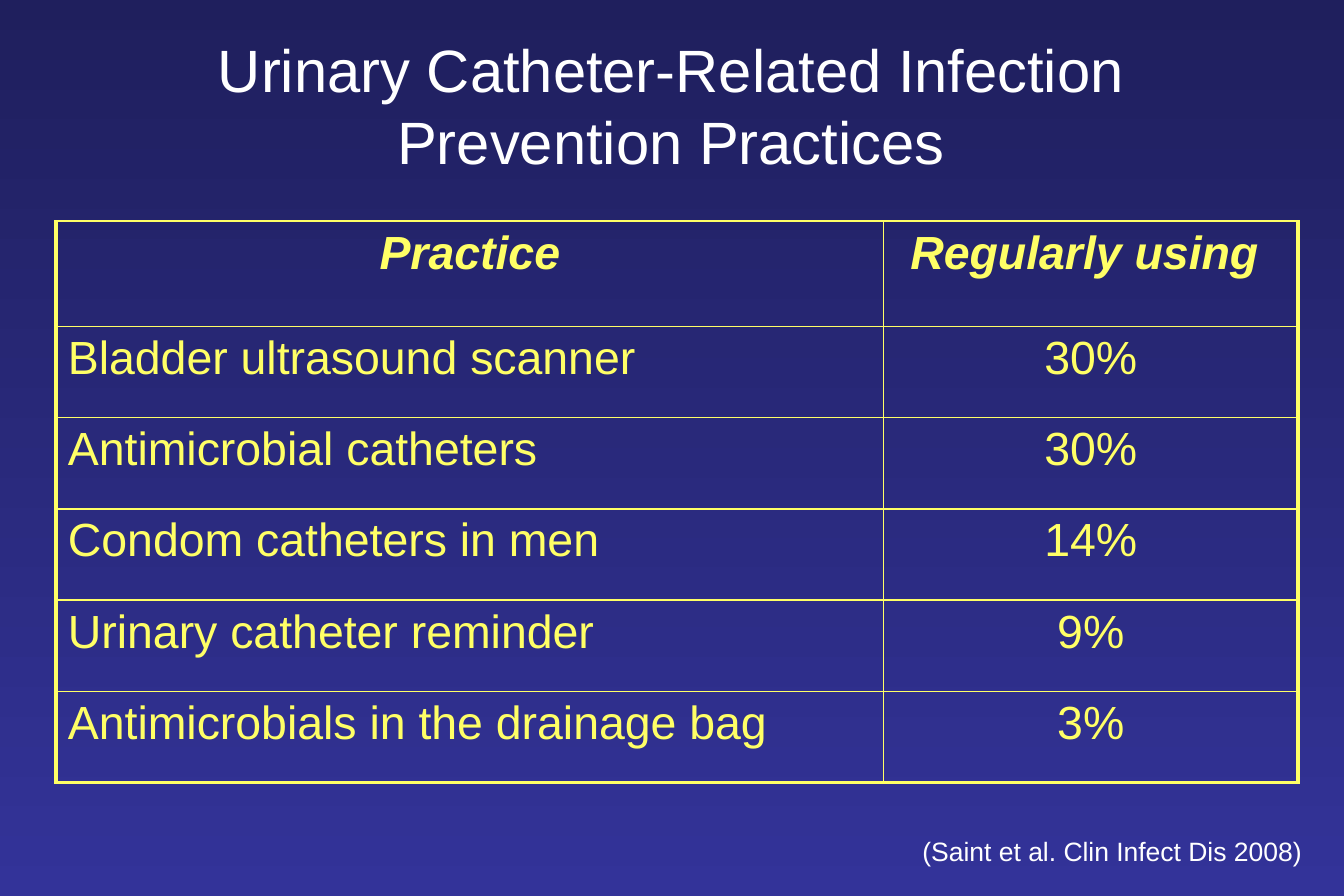
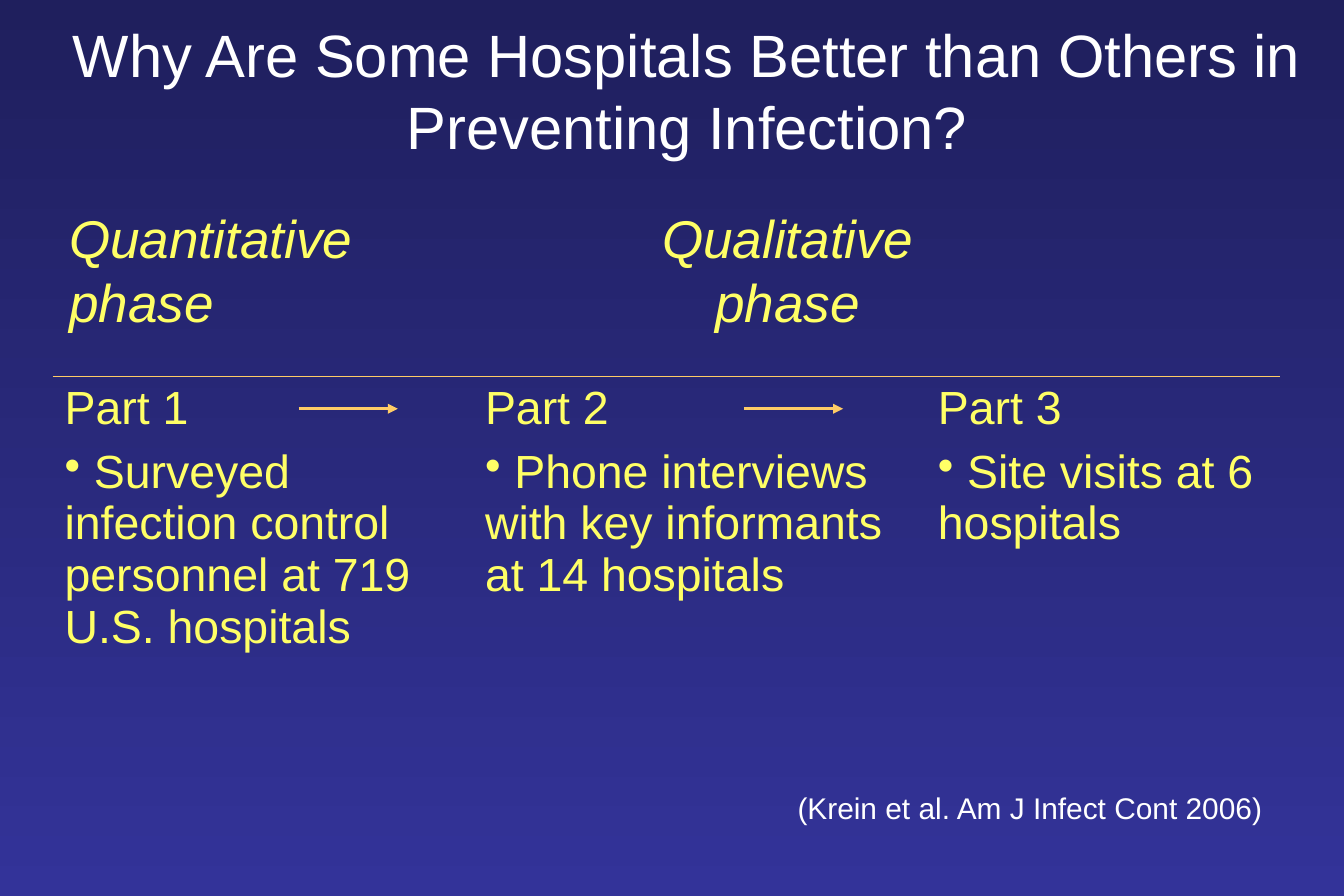
from lxml import etree
from pptx import Presentation
from pptx.dml.color import RGBColor
from pptx.enum.shapes import MSO_CONNECTOR
from pptx.enum.text import MSO_ANCHOR, MSO_AUTO_SIZE, PP_ALIGN
from pptx.oxml.ns import qn
from pptx.util import Cm, Pt

LEFT, CENTER, RIGHT = PP_ALIGN.LEFT, PP_ALIGN.CENTER, PP_ALIGN.RIGHT
MIDDLE = MSO_ANCHOR.MIDDLE
NO_AUTOFIT = MSO_AUTO_SIZE.NONE
STRAIGHT = MSO_CONNECTOR.STRAIGHT

NIGHT = RGBColor(0x1F, 0x1F, 0x5D)
INDIGO = RGBColor(0x33, 0x33, 0x99)
WHITE = RGBColor(0xFF, 0xFF, 0xFF)
YELLOW = RGBColor(0xFF, 0xFF, 0x66)
AMBER = RGBColor(0xFF, 0xCC, 0x66)
FONT = "Arial"
TITLE_ONLY = 5


class Deck:
    """Holds the shared style and the slide being built."""

    def __init__(self):
        self.prs = Presentation()
        self.prs.slide_width, self.prs.slide_height = Cm(28.58), Cm(19.05)
        fill = self.prs.slide_master.background.fill
        fill.gradient()
        fill.gradient_angle = 270
        for stop, color in zip(fill.gradient_stops, (NIGHT, INDIGO)):
            stop.color.rgb = color

    def format(self, tf, size, color, align=LEFT, bold=False, italic=False):
        for p in tf.paragraphs:
            p.alignment = align
            for r in p.runs:
                r.font.name, r.font.size = FONT, Pt(size)
                r.font.bold, r.font.italic = bold, italic
                r.font.color.rgb = color

    def slide(self, title, x, y, w, h):
        self.s = self.prs.slides.add_slide(self.prs.slide_layouts[TITLE_ONLY])
        sp = self.s.shapes.title
        sp.left, sp.top, sp.width, sp.height = Cm(x), Cm(y), Cm(w), Cm(h)
        tf = sp.text_frame
        tf.text = title
        tf.auto_size, tf.vertical_anchor = NO_AUTOFIT, MIDDLE
        self.format(tf, 36, WHITE, CENTER)

    def text(self, text, x, y, w, h, size, color=WHITE, align=LEFT, italic=False):
        tf = self.s.shapes.add_textbox(Cm(x), Cm(y), Cm(w), Cm(h)).text_frame
        tf.word_wrap = True
        tf.text = text
        self.format(tf, size, color, align, italic=italic)

    def arrow(self, x, y, length):
        line = self.s.shapes.add_connector(STRAIGHT, Cm(x), Cm(y), Cm(x + length), Cm(y))
        line.line.color.rgb, line.line.width = AMBER, Pt(2)
        etree.SubElement(line.line._get_or_add_ln(), qn("a:tailEnd"), type="triangle")
        etree.SubElement(line._element.spPr, qn("a:effectLst"))

    def table(self, rows, x, y, widths, heights):
        frame = self.s.shapes.add_table(
            len(rows), len(widths), Cm(x), Cm(y), Cm(sum(widths)), Cm(sum(heights)))
        table = frame.table
        table.first_row = table.horz_banding = False
        for column, width in zip(table.columns, widths):
            column.width = Cm(width)
        for row, height, texts in zip(table.rows, heights, rows):
            row.height = Cm(height)
            for cell, text in zip(row.cells, texts):
                cell.text_frame.text = text
                self.format(cell.text_frame, 28, YELLOW)
        return table

    def borders(self, cell, color, left=0, right=0, top=0, bottom=0):
        tc_pr = cell._tc.get_or_add_tcPr()
        for side, width in zip("LRTB", (left, right, top, bottom)):
            ln = etree.SubElement(tc_pr, qn("a:ln" + side), w=str(Pt(width)))
            if width:
                fill = etree.SubElement(ln, qn("a:solidFill"))
                etree.SubElement(fill, qn("a:srgbClr"), val=str(color))
            else:
                etree.SubElement(ln, qn("a:noFill"))
        cell.fill.background()

    def bullet(self, cell):
        p_pr = cell.text_frame.paragraphs[0]._p.get_or_add_pPr()
        etree.SubElement(p_pr, qn("a:buChar"), char="•")


def practices(deck):
    deck.slide("Urinary Catheter-Related Infection Prevention Practices",
               2.13, 0.64, 24.28, 3.18)
    rows = [
        ("Practice", "Regularly using "),
        ("Bladder ultrasound scanner", "30%"),
        ("Antimicrobial catheters", "30%"),
        ("Condom catheters in men", "14%"),
        ("Urinary catheter reminder", "9%"),
        ("Antimicrobials in the drainage bag", "3%"),
    ]
    table = deck.table(rows, 1.19, 4.7, (17.6, 8.81), [2.24] + [1.94] * 5)
    thick, thin = 2.25, 1
    for i, row in enumerate(table.rows):
        practice, share = row.cells
        bottom = thick if i == len(rows) - 1 else thin
        deck.borders(practice, YELLOW, thick, thin, thin, bottom)
        deck.borders(share, YELLOW, thin, thick, thin, bottom)
        deck.format(share.text_frame, 28, YELLOW, CENTER)
    for cell in table.rows[0].cells:
        deck.format(cell.text_frame, 28, YELLOW, CENTER, bold=True, italic=True)
    deck.text("(Saint et al. Clin Infect Dis 2008)", 13.23, 17.63, 14.71, 0.94, 16, align=RIGHT)


def phases(deck):
    deck.slide("Why Are Some Hospitals Better than Others in Preventing Infection?",
               0.64, 1.02, 27.94, 1.78)
    rows = [
        ("Part 1", "Part 2", "Part 3"),
        (" Surveyed infection control personnel at 719 U.S. hospitals",
         " Phone interviews with key informants at 14 hospitals",
         " Site visits at 6 hospitals"),
    ]
    table = deck.table(rows, 1.12, 8, (8.94, 9.63, 7.52), (1.22, 2.74))
    parts, details = table.rows
    for cell in parts.cells:
        deck.borders(cell, AMBER, top=1)
    for cell in details.cells:
        deck.borders(cell, AMBER)
        deck.bullet(cell)
    deck.text("Quantitative\nphase", 1.22, 4.24, 8, 2.97, 32, YELLOW, italic=True)
    deck.text("Qualitative\nphase", 12.75, 4.24, 8, 2.97, 32, YELLOW, CENTER, italic=True)
    for x in (6.35, 15.82):
        deck.arrow(x, 8.69, 2.11)
    deck.text("(Krein et al. Am J Infect Cont 2006)", 16.71, 16.66, 11.86, 1.02, 18)


def main():
    deck = Deck()
    practices(deck)
    phases(deck)
    deck.prs.save("out.pptx")


if __name__ == "__main__":
    main()
